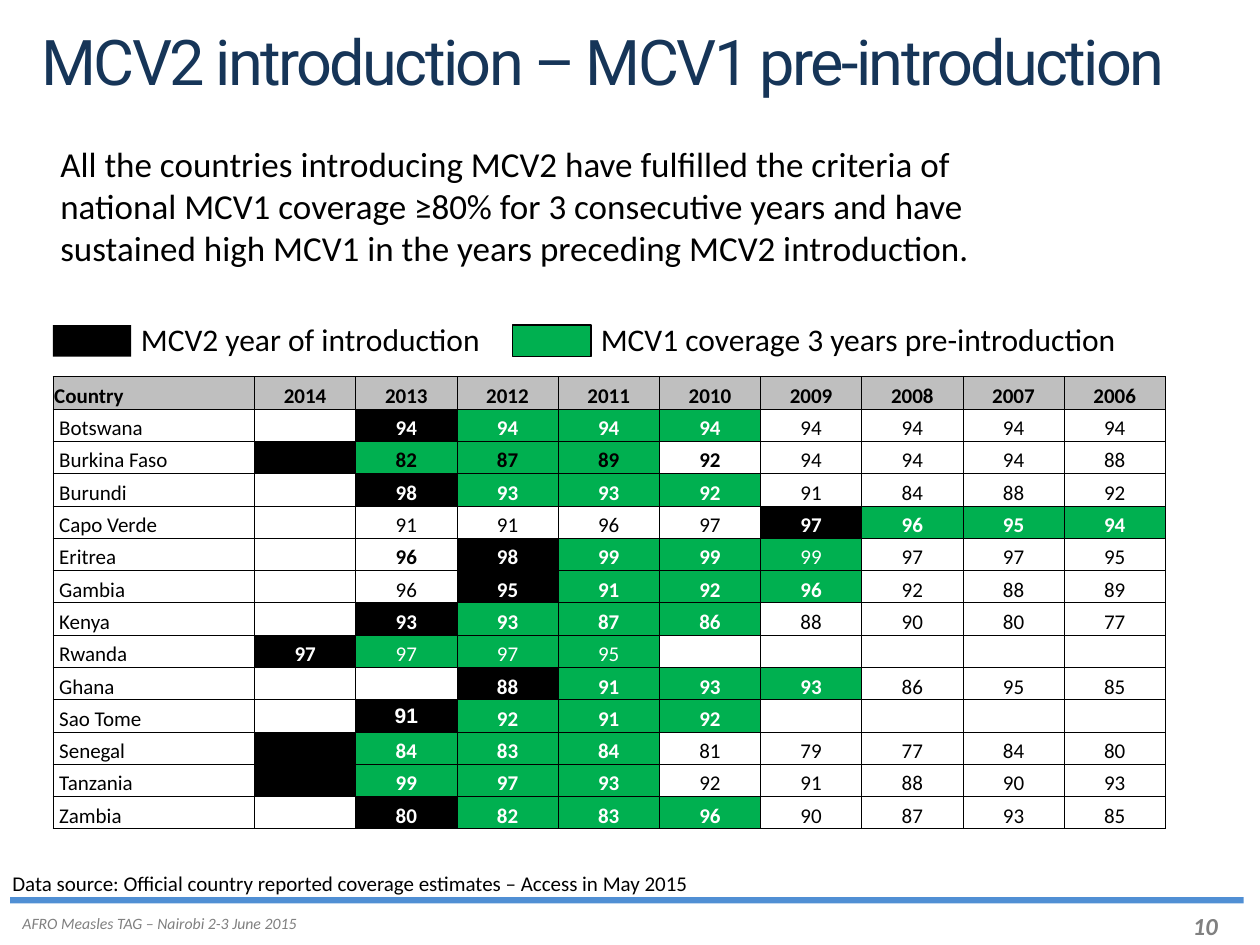
"""Build the slide on MCV1 coverage before MCV2 introduction."""
import dataclasses

import lxml.etree
import pptx
import pptx.dml.color
import pptx.enum.shapes
import pptx.enum.text
import pptx.oxml.ns
import pptx.util

Inches = pptx.util.Inches
Pt = pptx.util.Pt
Align = pptx.enum.text.PP_ALIGN
Anchor = pptx.enum.text.MSO_ANCHOR
qn = pptx.oxml.ns.qn


@dataclasses.dataclass(frozen=True)
class Theme:
    black: str = "000000"
    white: str = "FFFFFF"
    green: str = "00B050"
    head: str = "BFBFBF"
    navy: str = "163558"
    blue: str = "508FD4"
    grey: str = "808080"
    body: str = "Calibri"
    title: str = "Roboto"
    alt: str = "Arial"
    huge: float = 36
    large: float = 20
    key: float = 18
    page: float = 14
    small: float = 12
    foot: float = 9


THEME = Theme()


@dataclasses.dataclass(frozen=True)
class Land:
    name: str
    start: int
    rates: str
    ink: str = THEME.white
    flip: tuple[int, ...] = ()
    face: str = THEME.body
    anchor: Anchor = Anchor.BOTTOM


@dataclasses.dataclass(frozen=True)
class Label:
    text: str
    box: tuple[float, float, float, float]
    size: float
    color: str = THEME.black
    wrap: bool = False
    bold: bool = False
    slant: bool = False


@dataclasses.dataclass(frozen=True)
class Block:
    box: tuple[float, float, float, float]
    fill: str
    edge: str = ""


YEARS = [str(year) for year in range(2014, 2005, -1)]
SPAN = 3
LANDS = [
    Land("Botswana", 2013, "- 94 94 94 94 94 94 94 94"),
    Land("Burkina Faso", 2014, "- 82 87 89 92 94 94 94 88", ink=THEME.black, flip=(2010,)),
    Land("Burundi", 2013, "- 98 93 93 92 91 84 88 92"),
    Land("Capo Verde", 2009, "- 91 91 96 97 97 96 95 94"),
    Land("Eritrea", 2012, "- 96 98 99 99 99 97 97 95", flip=(2013, 2009)),
    Land("Gambia", 2012, "- 96 95 91 92 96 92 88 89"),
    Land("Kenya", 2013, "- 93 93 87 86 88 90 80 77"),
    Land("Rwanda", 2014, "97 97 97 95 - - - - -", flip=(2013, 2012, 2011)),
    Land("Ghana", 2012, "- - 88 91 93 93 86 95 85"),
    Land("Sao Tome", 2013, "- 91 92 91 92 - - - -", face=THEME.alt, anchor=Anchor.MIDDLE),
    Land("Senegal", 2014, "- 84 83 84 81 79 77 84 80"),
    Land("Tanzania", 2014, "- 99 97 93 92 91 88 90 93"),
    Land("Zambia", 2013, "- 80 82 83 96 90 87 93 85"),
]
BLOCKS = [
    Block((0.08, 7.12, 9.79, 0.05), THEME.blue),
    Block((0.42, 2.58, 0.62, 0.25), THEME.black),
    Block((4.07, 2.58, 0.62, 0.25), THEME.green, THEME.black),
]
LABELS = [
    Label("10", (9.37, 7.18, 0.44, 0.34), THEME.page, THEME.grey, bold=True, slant=True),
    Label("AFRO Measles TAG – Nairobi 2-3 June 2015", (0.08, 7.2, 2.4, 0.25),
          THEME.foot, THEME.grey, slant=True),
    Label("All the countries introducing MCV2 have fulfilled the criteria of national MCV1 "
          "coverage ≥80% for 3 consecutive years and have sustained high MCV1 in the years "
          "preceding MCV2 introduction.", (0.38, 1.08, 8.21, 1.11), THEME.large, wrap=True),
    Label("MCV2 year of introduction", (1.02, 2.49, 2.93, 0.4), THEME.key),
    Label("MCV1 coverage 3 years pre-introduction", (4.67, 2.49, 4.47, 0.4), THEME.key),
    Label("Data source: Official country reported coverage estimates – Access in May 2015",
          (0, 6.86, 5.67, 0.3), THEME.small),
]


def paint(code: str) -> pptx.dml.color.RGBColor:
    return pptx.dml.color.RGBColor.from_string(code)


def write(frame, text: str, *, size: float, color: str = THEME.black, face: str = THEME.body,
          bold: bool = False, slant: bool = False, align: Align = Align.LEFT,
          space: float = 0, lead: float = 1) -> None:
    para = frame.paragraphs[0]
    para.alignment = align
    para.line_spacing = lead
    if not text:
        lxml.etree.SubElement(para._p, qn("a:endParaRPr"), sz=str(int(size * 100)))
        return
    run = para.add_run()
    run.text = text
    font = run.font
    font.name, font.size, font.bold, font.italic = face, Pt(size), bold, slant
    font.color.rgb = paint(color)
    if space:
        run._r.get_or_add_rPr().set("spc", str(int(space * 100)))


def add_label(slide, label: Label) -> None:
    frame = slide.shapes.add_textbox(*map(Inches, label.box)).text_frame
    frame.word_wrap = label.wrap
    frame.auto_size = pptx.enum.text.MSO_AUTO_SIZE.SHAPE_TO_FIT_TEXT
    write(frame, label.text, size=label.size, color=label.color,
          bold=label.bold, slant=label.slant)


def add_title(slide, text: str) -> None:
    frame = slide.shapes.add_textbox(*map(Inches, (0.33, 0.25, 9.34, 0.56))).text_frame
    frame.word_wrap = True
    frame.margin_left = frame.margin_right = frame.margin_top = frame.margin_bottom = 0
    write(frame, text, size=THEME.huge, color=THEME.navy, face=THEME.title, space=-1.5, lead=0.9)


def add_block(slide, block: Block) -> None:
    shape = slide.shapes.add_shape(
        pptx.enum.shapes.MSO_SHAPE.RECTANGLE, *map(Inches, block.box))
    shape.shadow.inherit = False
    shape.fill.solid()
    shape.fill.fore_color.rgb = paint(block.fill)
    if block.edge:
        shape.line.color.rgb = paint(block.edge)
        shape.line.width = Pt(0.75)
    else:
        shape.line.fill.background()


def fill_cell(cell, text: str, *, fill: str = THEME.white, inset: float = 0.01,
              anchor: Anchor = Anchor.BOTTOM, **style) -> None:
    cell.margin_left = Inches(inset)
    cell.margin_right = cell.margin_top = Inches(0.01)
    cell.margin_bottom = 0
    cell.vertical_anchor = anchor
    props = cell._tc.get_or_add_tcPr()
    for side in ("lnL", "lnR", "lnT", "lnB"):
        line = lxml.etree.SubElement(props, qn(f"a:{side}"), w=str(Pt(0.5)))
        solid = lxml.etree.SubElement(line, qn("a:solidFill"))
        lxml.etree.SubElement(solid, qn("a:srgbClr"), val=THEME.black)
    cell.fill.solid()
    cell.fill.fore_color.rgb = paint(fill)
    write(cell.text_frame, text, size=THEME.small, **style)


def fill_row(table, row: int, land: Land) -> None:
    fill_cell(table.cell(row, 0), land.name, inset=0.05)
    for col, (year, rate) in enumerate(zip(map(int, YEARS), land.rates.split()), 1):
        first = year == land.start
        prior = land.start - SPAN <= year < land.start
        marked = first or prior
        fill_cell(table.cell(row, col), "" if rate == "-" else rate,
                  fill=THEME.black if first else THEME.green if prior else THEME.white,
                  color=land.ink if marked else THEME.black,
                  bold=marked != (year in land.flip), align=Align.CENTER,
                  face=land.face if first else THEME.body,
                  anchor=land.anchor if first else Anchor.BOTTOM)


def add_grid(slide) -> None:
    table = slide.shapes.add_table(
        len(LANDS) + 1, len(YEARS) + 1, *map(Inches, (0.42, 2.99, 8.83, 3.59))).table
    table.horz_banding = False
    for col, head in enumerate(["Country", *YEARS]):
        table.columns[col].width = Inches(7.23 / len(YEARS) if col else 1.6)
        fill_cell(table.cell(0, col), head, fill=THEME.head, bold=True,
                  align=Align.CENTER if col else Align.LEFT)
    for row, land in enumerate(LANDS, 1):
        fill_row(table, row, land)


def main() -> None:
    deck = pptx.Presentation()
    deck.slide_width, deck.slide_height = Inches(10), Inches(7.5)
    slide = deck.slides.add_slide(deck.slide_layouts[6])
    for block in BLOCKS:
        add_block(slide, block)
    add_title(slide, "MCV2 introduction – MCV1 pre-introduction")
    add_grid(slide)
    for label in LABELS:
        add_label(slide, label)
    deck.save("out.pptx")


if __name__ == "__main__":
    main()
